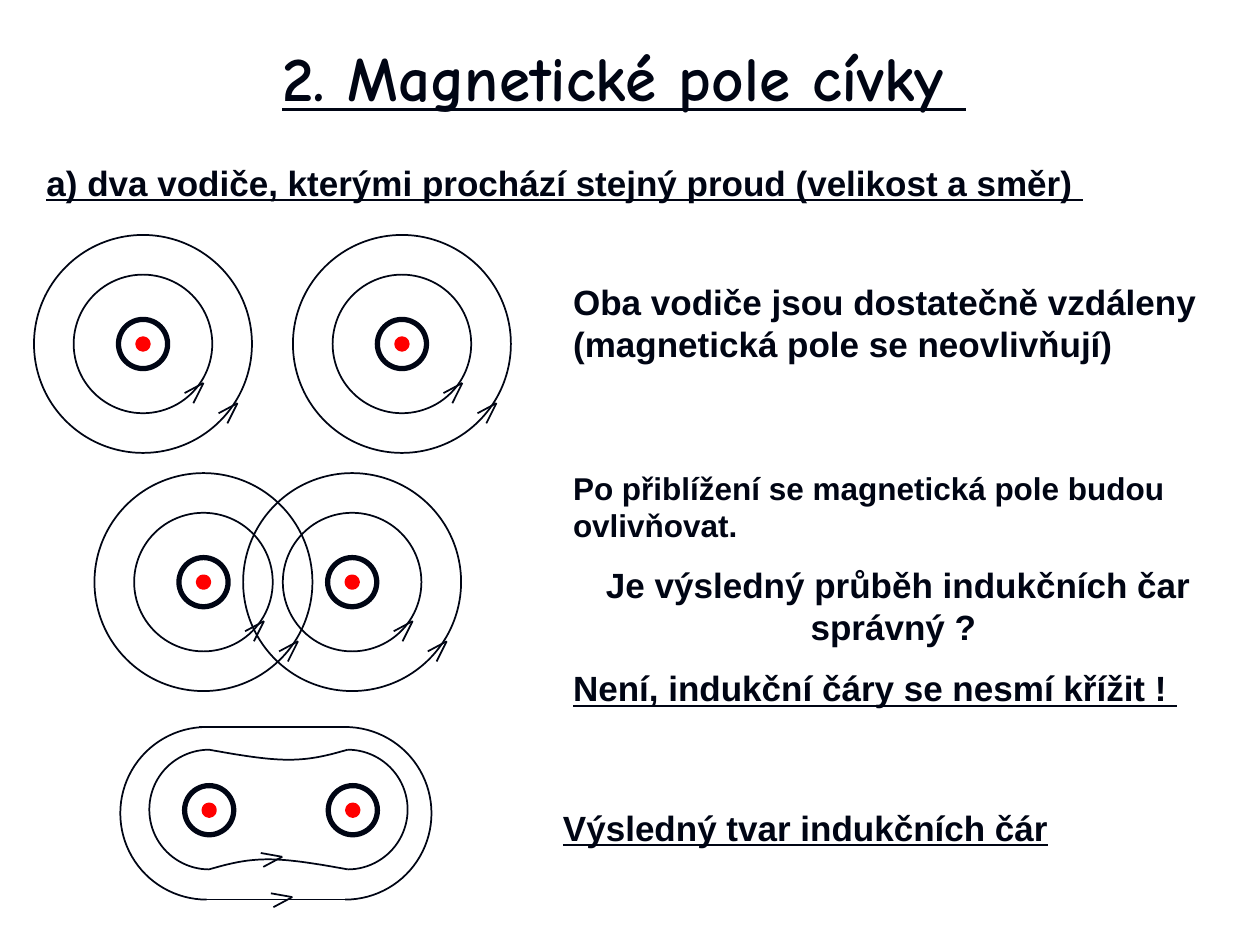
from lxml.etree import SubElement
from pptx import Presentation
from pptx.dml.color import RGBColor
from pptx.enum.shapes import MSO_CONNECTOR as LINK, MSO_SHAPE as SHAPE
from pptx.enum.text import MSO_ANCHOR as ANCHOR, PP_ALIGN as ALIGN
from pptx.oxml.ns import qn
from pptx.util import Inches, Pt

# Grid of 100 columns by 75 rows on the slide
COLS, ROWS = 100, 75
CELL = Inches(0.1)
INK, RED = "000514", "FF0000"


def grid(*cells):
    return [round(c * CELL) for c in cells]


def color(code):
    return RGBColor.from_string(code)


def style(shape, fill=None, line=INK, width=1):
    shape.shadow.inherit = False
    if fill:
        shape.fill.solid()
        shape.fill.fore_color.rgb = color(fill)
    else:
        shape.fill.background()
    shape.line.color.rgb = color(line)
    shape.line.width = Pt(width)


def write(para, text, size=20, font="Arial", under=False, align=ALIGN.LEFT, before=0):
    para.alignment = align
    para.space_before = Pt(before)
    run = para.add_run()
    run.text = text
    face = run.font
    face.size, face.name, face.bold = Pt(size), font, True
    face.underline = under
    face.color.rgb = color(INK)


def note(slide, box, *parts):
    """Text box with one paragraph for each (text, format) pair."""
    frame = slide.shapes.add_textbox(*grid(*box)).text_frame
    frame.word_wrap = True
    for i, (text, form) in enumerate(parts):
        para = frame.add_paragraph() if i else frame.paragraphs[0]
        write(para, text, before=11 if i else 0, **form)


def ring(shapes, x, y, size, **form):
    """Circle around the centre x, y."""
    box = grid(x - size / 2, y - size / 2, size, size)
    style(shapes.add_shape(SHAPE.OVAL, *box), **form)


def line(shapes, x1, y1, x2, y2):
    link = shapes.add_connector(LINK.STRAIGHT, *grid(x1, y1, x2, y2))
    link.line.color.rgb = color(INK)
    link.line.width = Pt(1)
    SubElement(link._element.spPr, qn("a:effectLst"))


def arrow(shapes, x, y, tails):
    """Open arrowhead with its tip at x, y."""
    for dx, dy in tails:
        line(shapes, x + dx, y + dy, x, y)


def wire(shapes, x, y):
    ring(shapes, x, y, 3.9, width=3)
    ring(shapes, x, y, 0.8, fill=RED, line=RED, width=3)


def field(shapes, x, y):
    """Conductor with two circular field lines."""
    wire(shapes, x, y)
    for size in (11, 17.3):
        ring(shapes, x, y, size)
    for dx, dy in ((4.8, 3.1), (7.5, 4.7)):
        arrow(shapes, x + dx, y + dy, ((-1.5, 0.8), (-0.8, 1.6)))


def arc(shapes, x, y, r, start, end):
    shape = shapes.add_shape(SHAPE.ARC, *grid(x - r, y - r, 2 * r, 2 * r))
    # Angles are kept in 60000ths of a degree, scaled by 100000
    shape.adjustments[0], shape.adjustments[1] = start * 0.6, end * 0.6
    style(shape)


def ends(shapes, left, right, y, r):
    """Half circles that close a field line on both sides."""
    arc(shapes, left, y, r, 90, 270)
    arc(shapes, right, y, r, 270, 90)


def waist(shapes, dots, steps=16):
    """Curve through two joined cubic Bézier pieces."""
    pts = [dots[0]]
    for a, b, c, d in (dots[:4], dots[3:]):
        for i in range(1, steps + 1):
            t = i / steps
            u = 1 - t
            pts.append([u**3 * p + 3 * u * u * t * q + 3 * u * t * t * r + t**3 * s
                        for p, q, r, s in zip(a, b, c, d)])
    pen = shapes.build_freeform(*pts[0], scale=CELL)
    # Fine units keep the curve smooth
    fine = 1000
    pen = shapes.build_freeform(*[round(v * fine) for v in pts[0]], scale=CELL / fine)
    pen.add_line_segments([[round(v * fine) for v in p] for p in pts[1:]], close=False)
    style(pen.convert_to_shape())


def joint(shapes):
    """Resulting field of both conductors."""
    for x in (16.6, 28):
        wire(shapes, x, 64.3)
    # Inner line, the lower curve is the upper one turned by 180 degrees
    mid_x, mid_y = 22.1, 64.25
    ends(shapes, 16.6, 27.6, mid_y, 4.75)
    top = [(16.6, 59.5), (18.8, 59.9), (21.1, 60.3), (22.9, 60.3),
           (24.8, 60.3), (26.2, 59.9), (27.6, 59.5)]
    waist(shapes, top)
    waist(shapes, [(2 * mid_x - x, 2 * mid_y - y) for x, y in top])
    # Outer line
    ends(shapes, 16.4, 27.4, 64.55, 6.85)
    for y in (57.7, 71.4):
        line(shapes, 15.8, y, 27.6, y)
    for x, y in ((22.4, 68), (23.2, 71.2)):
        arrow(shapes, x, y, ((-1.7, -0.3), (-1.5, 0.8)))


def main():
    deck = Presentation()
    deck.slide_width, deck.slide_height = grid(COLS, ROWS)
    slide = deck.slides.add_slide(deck.slide_layouts[5])

    # Title
    title = slide.shapes.title
    title.left, title.top, title.width, title.height = grid(2.7, 2.1, 93.7, 7.9)
    title.text_frame.vertical_anchor = ANCHOR.MIDDLE
    write(title.text_frame.paragraphs[0], "2. Magnetické pole cívky ",
          size=36, font="Comic Neue", under=True, align=ALIGN.CENTER)

    # Separate and crossing fields
    for y, centres in ((27.3, (31.9, 11.35)), (46.2, (27.95, 16.15))):
        group = slide.shapes.add_group_shape().shapes
        for x in centres:
            field(group, x, y)
    joint(slide.shapes.add_group_shape().shapes)

    # Notes
    under = {"under": True}
    note(slide, (2.7, 12.3, 95.3, 4.3),
         ("a) dva vodiče, kterými prochází stejný proud (velikost a směr) ", under))
    note(slide, (44.5, 21.8, 52.8, 7.7),
         ("Oba vodiče jsou dostatečně vzdáleny (magnetická pole se neovlivňují)", {}))
    note(slide, (44.5, 36.7, 53.6, 20.3),
         ("Po přiblížení se magnetická pole budou ovlivňovat.", {"size": 18}),
         ("Je výsledný průběh indukčních čar správný ? ", {"align": ALIGN.CENTER}),
         ("Není, indukční čáry se nesmí křížit ! ", under))
    note(slide, (43.7, 63.5, 48, 4.3), ("Výsledný tvar indukčních čár", under))

    deck.save("out.pptx")


if __name__ == "__main__":
    main()
